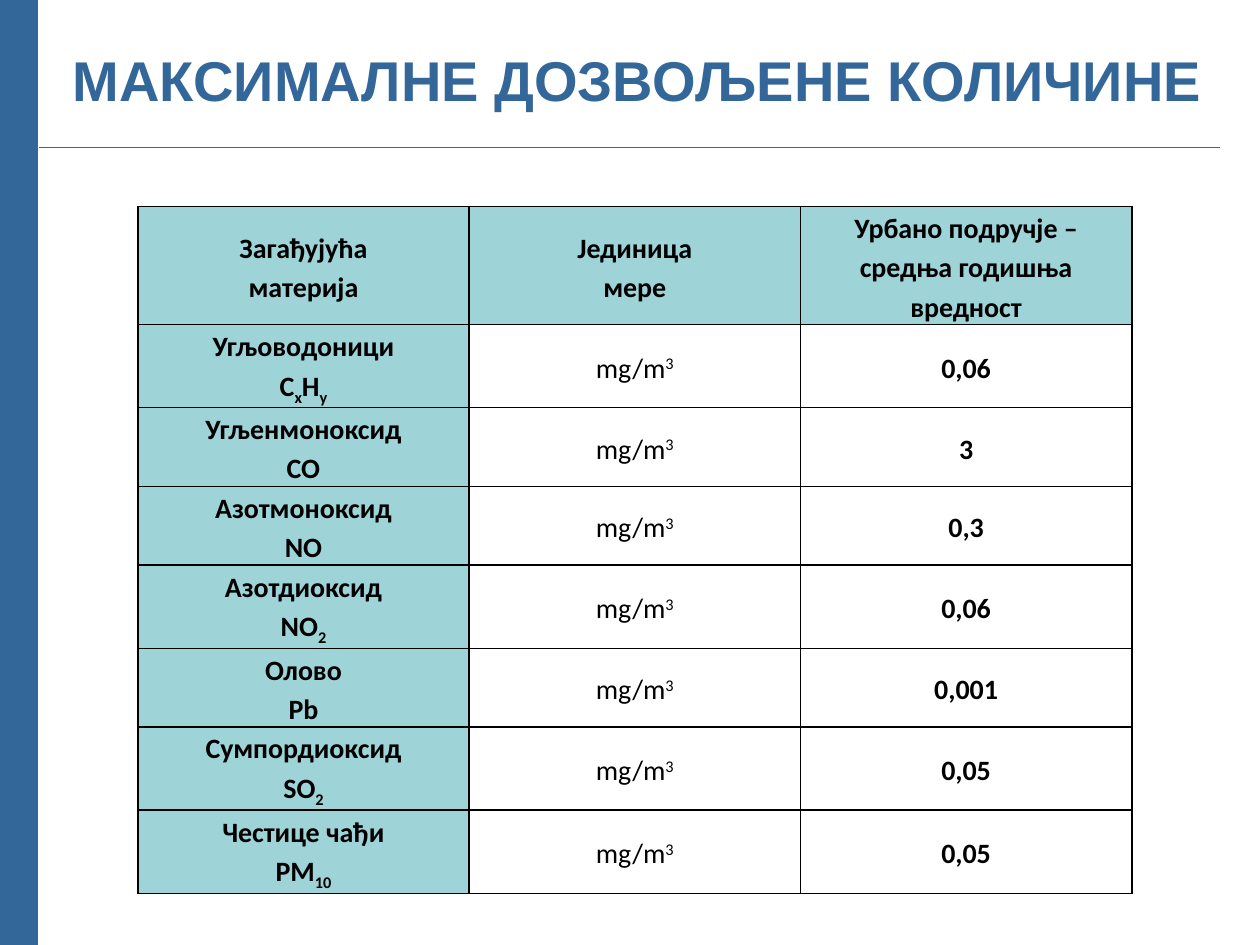
from dataclasses import dataclass

from lxml import etree
from pptx import Presentation
from pptx.dml.color import RGBColor
from pptx.enum import shapes, text
from pptx.oxml import ns
from pptx.util import Pt


@dataclass(frozen=True)
class Theme:
    blue: RGBColor = RGBColor(0x33, 0x66, 0x99)
    teal: RGBColor = RGBColor(0x9E, 0xD3, 0xD7)
    black: RGBColor = RGBColor(0, 0, 0)
    title_font: str = "Arial"
    table_font: str = "Calibri"
    title_size: int = 32
    table_size: int = 16


THEME = Theme()
WIDTH, HEIGHT = 720, 540
BASELINES = {"_": "-25000", "^": "30000"}

# A cell is a list of lines; a line is a list of runs.
# A leading "_" marks a subscript and "^" a superscript.
HEADER = [
    [["Загађујућа"], ["материја"]],
    [["Јединица"], ["мере"]],
    [["Урбано подручје – средња годишња вредност"]],
]
UNIT = [["mg/m", "^3"]]
POLLUTANTS = [
    ("Угљоводоници", ["C", "_x", "H", "_y"], "0,06"),
    ("Угљенмоноксид", ["CO"], "3"),
    ("Азотмоноксид", ["NO"], "0,3"),
    ("Азотдиоксид", ["NO", "_2"], "0,06"),
    ("Олово", ["Pb"], "0,001"),
    ("Сумпордиоксид", ["SO", "_2"], "0,05"),
    ("Честице чађи", ["PM", "_10"], "0,05"),
]


def set_title(slide, title_text):
    title = slide.shapes.title
    title.left, title.top, title.width, title.height = Pt(34), Pt(0), Pt(669.6), Pt(90)
    frame = title.text_frame
    frame.text = title_text
    frame.word_wrap = True
    frame.vertical_anchor = text.MSO_ANCHOR.MIDDLE
    paragraph = frame.paragraphs[0]
    paragraph.alignment = text.PP_ALIGN.CENTER
    font = paragraph.font
    font.name, font.size, font.bold = THEME.title_font, Pt(THEME.title_size), True
    font.color.rgb = THEME.blue


def add_line(slide, start, end, weight):
    line = slide.shapes.add_connector(
        shapes.MSO_CONNECTOR.STRAIGHT, *map(Pt, start + end))
    line.line.color.rgb = THEME.blue
    line.line.width = Pt(weight)
    etree.SubElement(line._element.spPr, ns.qn("a:effectLst"))


def set_borders(cell):
    properties = cell._tc.get_or_add_tcPr()
    for index, side in enumerate(("lnL", "lnR", "lnT", "lnB")):
        border = etree.Element(ns.qn(f"a:{side}"), w=str(Pt(1)))
        fill = etree.SubElement(border, ns.qn("a:solidFill"))
        etree.SubElement(fill, ns.qn("a:srgbClr"), val=str(THEME.black))
        properties.insert(index, border)


def write_line(paragraph, runs, bold):
    paragraph.alignment = text.PP_ALIGN.CENTER
    paragraph.line_spacing = 1.15
    font = paragraph.font
    font.name, font.size, font.bold = THEME.table_font, Pt(THEME.table_size), bold
    font.color.rgb = THEME.black
    for content in runs:
        run = paragraph.add_run()
        run.text = content.lstrip("_^")
        if content[0] in BASELINES:
            run.font._element.set("baseline", BASELINES[content[0]])


def fill_cell(cell, lines, shaded, bold):
    cell.margin_left = cell.margin_right = Pt(5)
    cell.margin_top = cell.margin_bottom = Pt(0)
    cell.vertical_anchor = text.MSO_ANCHOR.MIDDLE
    if shaded:
        cell.fill.solid()
        cell.fill.fore_color.rgb = THEME.teal
    else:
        cell.fill.background()
    set_borders(cell)
    frame = cell.text_frame
    for index, runs in enumerate(lines):
        paragraph = frame.add_paragraph() if index else frame.paragraphs[0]
        write_line(paragraph, runs, bold)


def add_limits_table(slide):
    rows = [HEADER] + [
        [[[name], formula], UNIT, [[limit]]] for name, formula, limit in POLLUTANTS]
    table = slide.shapes.add_table(
        len(rows), len(HEADER), Pt(78.75), Pt(118), Pt(568), Pt(44 * len(rows))).table
    table.first_row = table.horz_banding = False
    for row_index, row in enumerate(rows):
        for column_index, lines in enumerate(row):
            fill_cell(
                table.cell(row_index, column_index), lines,
                shaded=row_index == 0 or column_index == 0,
                bold=lines is not UNIT)


def main():
    presentation = Presentation()
    presentation.slide_width, presentation.slide_height = Pt(WIDTH), Pt(HEIGHT)
    slide = presentation.slides.add_slide(presentation.slide_layouts[5])

    # Title
    set_title(slide, "МАКСИМАЛНЕ ДОЗВОЉЕНЕ КОЛИЧИНЕ ")

    # Side bar and rule under the title
    add_line(slide, (1.5, 0), (1.5, HEIGHT), 40)
    add_line(slide, (22.5, 84.25), (697, 84.25), 0.75)

    # Permitted limits for each pollutant
    add_limits_table(slide)

    presentation.save("out.pptx")


if __name__ == "__main__":
    main()
